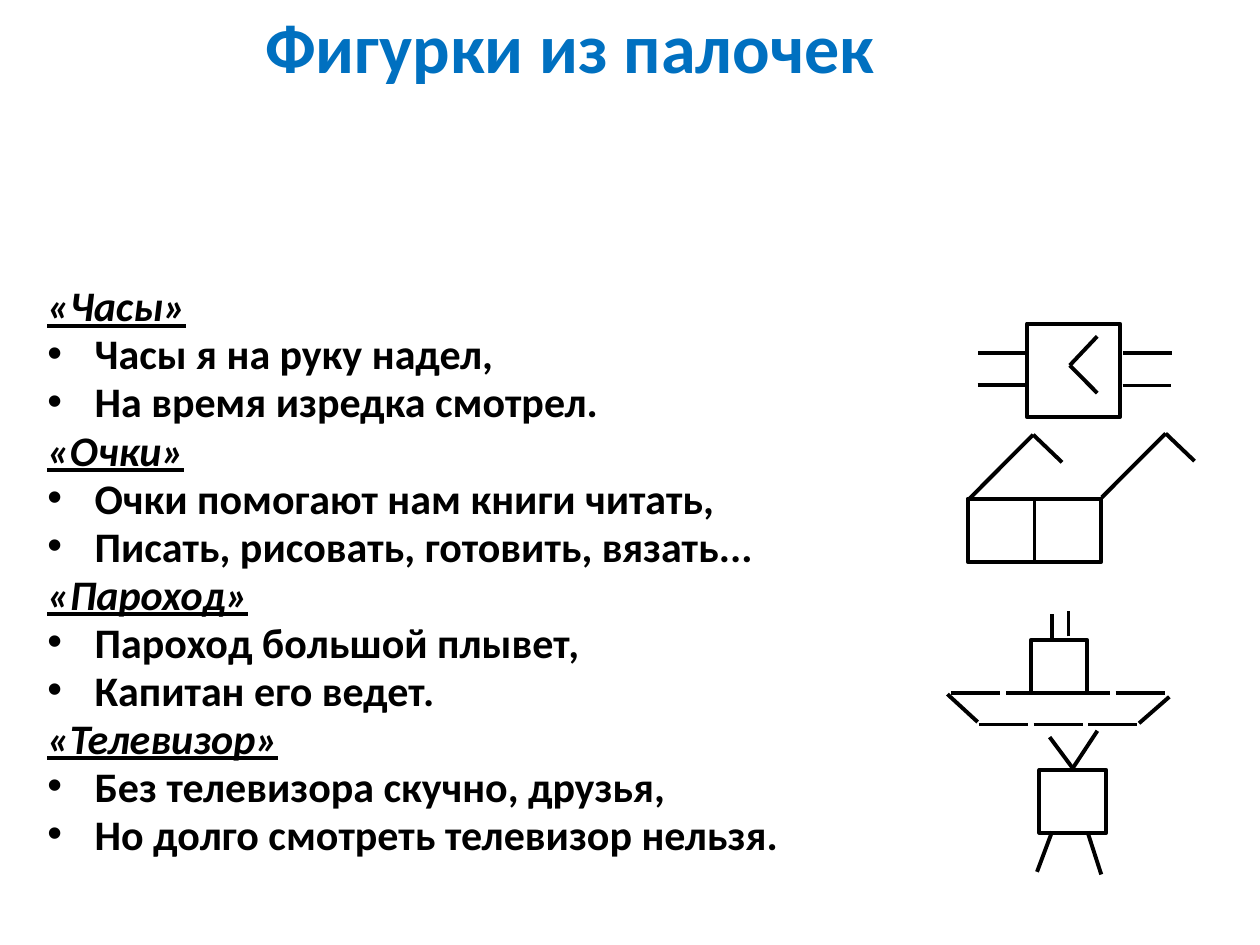
from lxml.etree import SubElement
from pptx import Presentation
from pptx.dml.color import RGBColor
from pptx.enum.shapes import MSO_CONNECTOR, MSO_SHAPE
from pptx.enum.text import MSO_ANCHOR, PP_ALIGN
from pptx.oxml.ns import qn
from pptx.util import Pt

BLUE = RGBColor(0x00, 0x70, 0xC0)
BLACK = RGBColor(0x00, 0x00, 0x00)
WHITE = RGBColor(0xFF, 0xFF, 0xFF)

RHYMES = [
    ("«Часы»", ["Часы я на руку надел,", "На время изредка смотрел."]),
    ("«Очки»", ["Очки помогают нам книги читать,",
                "Писать, рисовать, готовить, вязать..."]),
    ("«Пароход»", ["Пароход большой плывет,", "Капитан его ведет."]),
    ("«Телевизор»", ["Без телевизора скучно, друзья,",
                     "Но долго смотреть телевизор нельзя."]),
]


def write(para, text, size=24, color=BLACK, italic=False, under=False):
    run = para.add_run()
    run.text = text
    font = run.font
    font.name = "Calibri"
    font.size = Pt(size)
    font.bold = True
    font.italic = italic
    font.underline = under
    font.color.rgb = color


class Board:
    def __init__(self, slide, ink=BLACK, width=2.25):
        self.slide = slide
        self.ink = ink
        self.width = width

    def title(self, text, left, top, width, height):
        box = self.slide.shapes.title
        box.left, box.top = Pt(left), Pt(top)
        box.width, box.height = Pt(width), Pt(height)
        frame = box.text_frame
        frame.vertical_anchor = MSO_ANCHOR.MIDDLE
        para = frame.paragraphs[0]
        para.alignment = PP_ALIGN.CENTER
        write(para, text, size=40, color=BLUE)

    def verses(self, rhymes, left, top, width, height, indent=27):
        box = self.slide.shapes.add_textbox(
            Pt(left), Pt(top), Pt(width), Pt(height))
        frame = box.text_frame
        frame.word_wrap = True
        lines = [(text, text == name)
                 for name, verse in rhymes for text in [name, *verse]]
        for i, (text, head) in enumerate(lines):
            para = frame.add_paragraph() if i else frame.paragraphs[0]
            para.line_spacing = 0.8
            para.space_before = Pt(4.4 if i else 0)
            props = para._p.get_or_add_pPr()
            props.set("marL", str(Pt(indent)))
            props.set("indent", str(-Pt(indent)))
            if head:
                SubElement(props, qn("a:buNone"))
            else:
                SubElement(props, qn("a:buFont")).set("typeface", "Arial")
                SubElement(props, qn("a:buChar")).set("char", "•")
            write(para, text, italic=head, under=head)

    def figure(self, boxes, sticks):
        group = self.slide.shapes.add_group_shape()
        for box in boxes:
            self.box(group, *box)
        for stick in sticks:
            self.stick(group, *stick)

    def box(self, group, left, top, width, height):
        shape = group.shapes.add_shape(
            MSO_SHAPE.RECTANGLE, Pt(left), Pt(top), Pt(width), Pt(height))
        shape.shadow.inherit = False
        shape.fill.solid()
        shape.fill.fore_color.rgb = WHITE
        self.stroke(shape)

    def stick(self, group, x1, y1, x2, y2):
        line = group.shapes.add_connector(
            MSO_CONNECTOR.STRAIGHT, Pt(x1), Pt(y1), Pt(x2), Pt(y2))
        self.stroke(line)
        SubElement(line._element.spPr, qn("a:effectLst"))

    def stroke(self, shape):
        shape.line.color.rgb = self.ink
        shape.line.width = Pt(self.width)


def watch(board):
    straps = [(x, y, x + 27.7, y)
              for x, y in [(642, 201.8), (641.5, 220.3),
                           (558.9, 201.5), (558.6, 219.8)]]
    hands = [(611.3, 208.8, 627, y) for y in (192.2, 224.6)]
    board.figure([(586.8, 185, 53.3, 53.3)], straps + hands)


def glasses(board):
    arms = []
    for x, y in [(553.9, 285), (629.6, 284.3)]:
        arms += [(x, y, x + 36.5, y - 36.6),
                 (x + 36.5, y - 36.6, x + 53, y - 20.8)]
    board.figure([(x, 285, 38.2, 36) for x in (553, 591.2)], arms)


def ship(board):
    deck = [(543.6, 396, 4), (559.4, 414, 3)]
    planks = [(x + 31.3 * i, y, x + 31.3 * i + 28, y)
              for x, y, count in deck for i in range(count)]
    sides = [(650.9, 413.3, 668.2, 398.2), (558.7, 412.6, 541.4, 396.7)]
    pipes = [(x, y, x, y - 14.4) for x, y in [(601.2, 365), (610.6, 363.6)]]
    board.figure([(589, 365.8, 32.4, 30.2)], planks + sides + pipes)


def telly(board):
    horns = [(613, 439, 627.1, 417.6), (613, 439, 599.8, 421.2)]
    legs = [(601.2, 475.2, 592.6, 498.2), (621.4, 475.2, 629.3, 499.7)]
    board.figure([(594, 440, 38.2, 36)], horns + legs)


def main():
    deck = Presentation()
    deck.slide_width, deck.slide_height = Pt(720), Pt(540)
    board = Board(deck.slides.add_slide(deck.slide_layouts[5]))
    board.title("Фигурки из палочек", 36, 0, 579, 52)
    board.verses(RHYMES, 20, 162, 700, 320)
    for draw in (watch, glasses, ship, telly):
        draw(board)
    deck.save("out.pptx")


if __name__ == "__main__":
    main()
